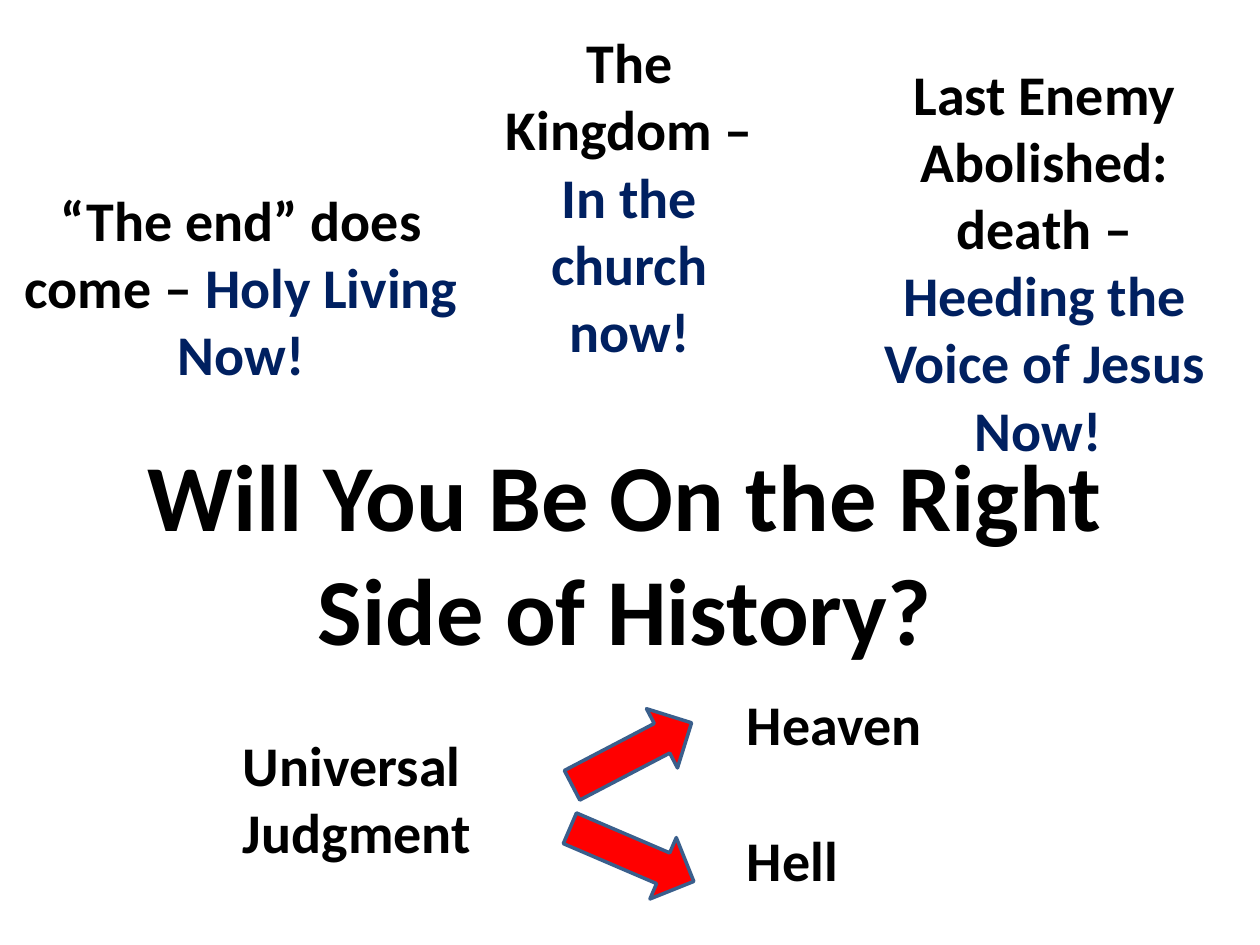
from pptx import Presentation
from pptx.dml.color import RGBColor
from pptx.enum.shapes import MSO_SHAPE
from pptx.enum.text import MSO_ANCHOR, MSO_AUTO_SIZE, PP_ALIGN
from pptx.util import Inches, Pt

BLACK, NAVY, RED, OUTLINE = "000000", "002060", "FF0000", "3A5F8C"

TITLE = "Will You Be On the Right Side of History?"
TITLE_PLACE = (0.42, 3.42, 9.08, 1.92)
THEMES = [
    ("“The end” does come – ", "Holy Living Now!", (0, 1.42, 3.83, 1.72)),
    ("The Kingdom – ", "In the church now!", (3.83, 0.17, 2.33, 2.79)),
    ("Last Enemy Abolished: death – ", "Heeding the Voice of Jesus Now! ",
     (6.83, 0.42, 2.92, 3.33)),
]
JUDGMENT = [
    ("Universal Judgment", (1.83, 5.75, 2.33, 1.18)),
    ("Heaven", (5.83, 5.42, 1.67, 0.64)),
    ("Hell", (5.83, 6.5, 1.83, 0.64)),
]
ARROWS = [(5.72, 332.4), (6.52, 23.2)]
ARROW_LEFT, ARROW_WIDTH, ARROW_HEIGHT = 4.48, 1.07, 0.53


def color(value):
    """Turn a hex string into a colour."""
    return RGBColor.from_string(value)


def fill_text(box, parts, size, align):
    """Write coloured bold parts as one paragraph in a box."""
    frame = box.text_frame
    frame.word_wrap = True
    frame.auto_size = MSO_AUTO_SIZE.SHAPE_TO_FIT_TEXT
    frame.vertical_anchor = MSO_ANCHOR.TOP
    para = frame.paragraphs[0]
    para.alignment = align
    for text, shade in parts:
        span = para.add_run()
        span.text = text
        span.font.name = "Calibri"
        span.font.size = Pt(size)
        span.font.bold = True
        span.font.color.rgb = color(shade)


def add_text(page, place, parts, align):
    """Add a text box at a place given in inches."""
    box = page.shapes.add_textbox(*map(Inches, place))
    fill_text(box, parts, 32, align)


def add_arrow(page, top, angle):
    """Add a red arrow turned by an angle."""
    arrow = page.shapes.add_shape(
        MSO_SHAPE.RIGHT_ARROW, Inches(ARROW_LEFT), Inches(top),
        Inches(ARROW_WIDTH), Inches(ARROW_HEIGHT))
    arrow.rotation = angle
    arrow.shadow.inherit = False
    arrow.fill.solid()
    arrow.fill.fore_color.rgb = color(RED)
    arrow.line.color.rgb = color(OUTLINE)
    arrow.line.width = Pt(2)


def main():
    """Build the slide and save it."""
    deck = Presentation()
    deck.slide_width, deck.slide_height = Inches(10), Inches(7.5)
    page = deck.slides.add_slide(deck.slide_layouts[5])
    title = page.shapes.title
    title.left, title.top, title.width, title.height = map(Inches, TITLE_PLACE)
    fill_text(title, [(TITLE, BLACK)], 54, PP_ALIGN.CENTER)
    for theme, lesson, place in THEMES:
        add_text(page, place, [(theme, BLACK), (lesson, NAVY)], PP_ALIGN.CENTER)
    for label, place in JUDGMENT:
        add_text(page, place, [(label, BLACK)], PP_ALIGN.LEFT)
    for top, angle in ARROWS:
        add_arrow(page, top, angle)
    deck.save("out.pptx")


if __name__ == "__main__":
    main()
